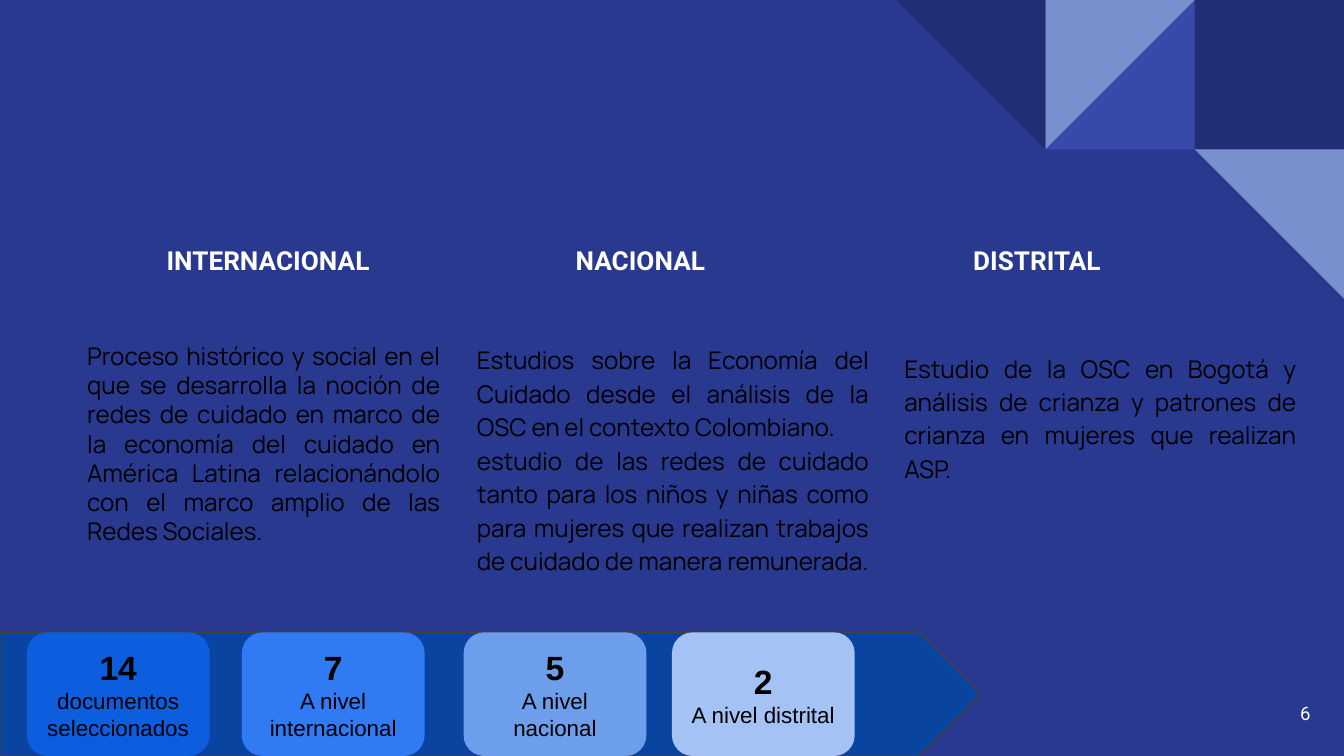
from pptx import Presentation
from pptx.dml.color import RGBColor
from pptx.enum.shapes import MSO_SHAPE as Shape
from pptx.enum.text import MSO_ANCHOR as Anchor, PP_ALIGN as Align
from pptx.util import Inches, Pt

WIDTH, HEIGHT = 10, 5.625
TILE = WIDTH / 9
BACKGROUND = "2A3990"
WHITE, BLACK = "FFFFFF", "000000"

TILES = [
    (8, 0, Shape.RECTANGLE, "212D74", 0, False),
    (7, 0, Shape.RIGHT_TRIANGLE, "3949AB", 0, True),
    (7, 0, Shape.RIGHT_TRIANGLE, "7890CD", 180, True),
    (6, 0, Shape.RIGHT_TRIANGLE, "212D74", 180, False),
    (8, 1, Shape.RIGHT_TRIANGLE, "7890CD", 180, False),
]

HEADINGS = [("INTERNACIONAL", 1), ("NACIONAL", 3.77), ("DISTRITAL", 6.72)]

DESCRIPTIONS = [
    ((0.55, 2.44, 2.82, 2.17), 1, [
        "Proceso histórico y social en el que se desarrolla la noción de redes de "
        "cuidado en marco de la economía del cuidado en América Latina "
        "relacionándolo con el marco amplio de las Redes Sociales."]),
    ((3.45, 2.44, 3.11, 1.97), 1.15, [
        "Estudios sobre la Economía del Cuidado desde el análisis de la OSC en el "
        "contexto Colombiano.",
        "estudio de las redes de cuidado tanto para los niños y niñas como para "
        "mujeres que realizan trabajos de cuidado de manera remunerada."]),
    ((6.63, 2.5, 3.11, 2.07), 1.15, [
        "Estudio de la OSC en Bogotá y análisis de crianza y patrones de crianza "
        "en mujeres que realizan ASP."]),
]

COUNTS = [
    ("14", "documentos seleccionados", 0.2, "0D5DDF"),
    ("7", "A nivel internacional", 1.8, "307BF3"),
    ("5", "A nivel nacional", 3.45, "6D9EEB"),
    ("2", "A nivel distrital", 5, "A4C2F4"),
]
BAND_HEIGHT = 0.92
BAND_TOP = HEIGHT - BAND_HEIGHT


def color(value):
    return RGBColor.from_string(value)


def add_box(page, kind, area, fill, line=None):
    box = page.shapes.add_shape(kind, *map(Inches, area))
    box.shadow.inherit = False
    box.fill.solid()
    box.fill.fore_color.rgb = color(fill)
    if line:
        box.line.color.rgb = color(line)
        box.line.width = Pt(0.75)
    else:
        box.line.fill.background()
    return box


def write(box, lines, font, ink, align, anchor=Anchor.TOP, spacing=None):
    frame = box.text_frame
    frame.word_wrap = True
    frame.vertical_anchor = anchor
    frame.margin_left = frame.margin_right = Inches(0.1)
    frame.margin_top = frame.margin_bottom = Inches(0.1)
    for index, (text, size, bold) in enumerate(lines):
        para = frame.add_paragraph() if index else frame.paragraphs[0]
        para.text = text
        para.alignment = align
        para.line_spacing = spacing
        para.font.name = font
        para.font.size = Pt(size)
        para.font.bold = bold
        para.font.color.rgb = color(ink)


def add_text(page, area, *args, **options):
    write(page.shapes.add_textbox(*map(Inches, area)), *args, **options)


deck = Presentation()
deck.slide_width, deck.slide_height = Inches(WIDTH), Inches(HEIGHT)
page = deck.slides.add_slide(deck.slide_layouts[6])
page.background.fill.solid()
page.background.fill.fore_color.rgb = color(BACKGROUND)

for column, row, kind, fill, rotation, flipped in TILES:
    tile = add_box(page, kind, (column * TILE, row * TILE, TILE, TILE), fill)
    tile.rotation = rotation
    if flipped:
        tile.element.spPr.xfrm.set("flipH", "1")

add_text(page, (9.25, 5.09, 0.6, 0.43), [("6", 10, False)], "Roboto", WHITE,
         Align.RIGHT, Anchor.MIDDLE)

for title, left in HEADINGS:
    heading = add_box(page, Shape.RECTANGLE, (left, 1.72, 1.99, 0.43), BACKGROUND)
    write(heading, [(title, 14, True)], "Roboto", WHITE, Align.CENTER)

for area, spacing, texts in DESCRIPTIONS:
    add_text(page, area, [(text, 13, False) for text in texts], "Manrope", BLACK,
             Align.JUSTIFY, spacing=spacing)

add_box(page, Shape.PENTAGON, (0, BAND_TOP, 7.3, BAND_HEIGHT), "0944A1", "434343")
for number, label, left, fill in COUNTS:
    card = add_box(page, Shape.ROUNDED_RECTANGLE,
                   (left, BAND_TOP, 1.36, BAND_HEIGHT), fill)
    write(card, [(number, 18, True), (label, 12, False)], "Arial", BLACK,
          Align.CENTER, Anchor.MIDDLE)

deck.save("out.pptx")
